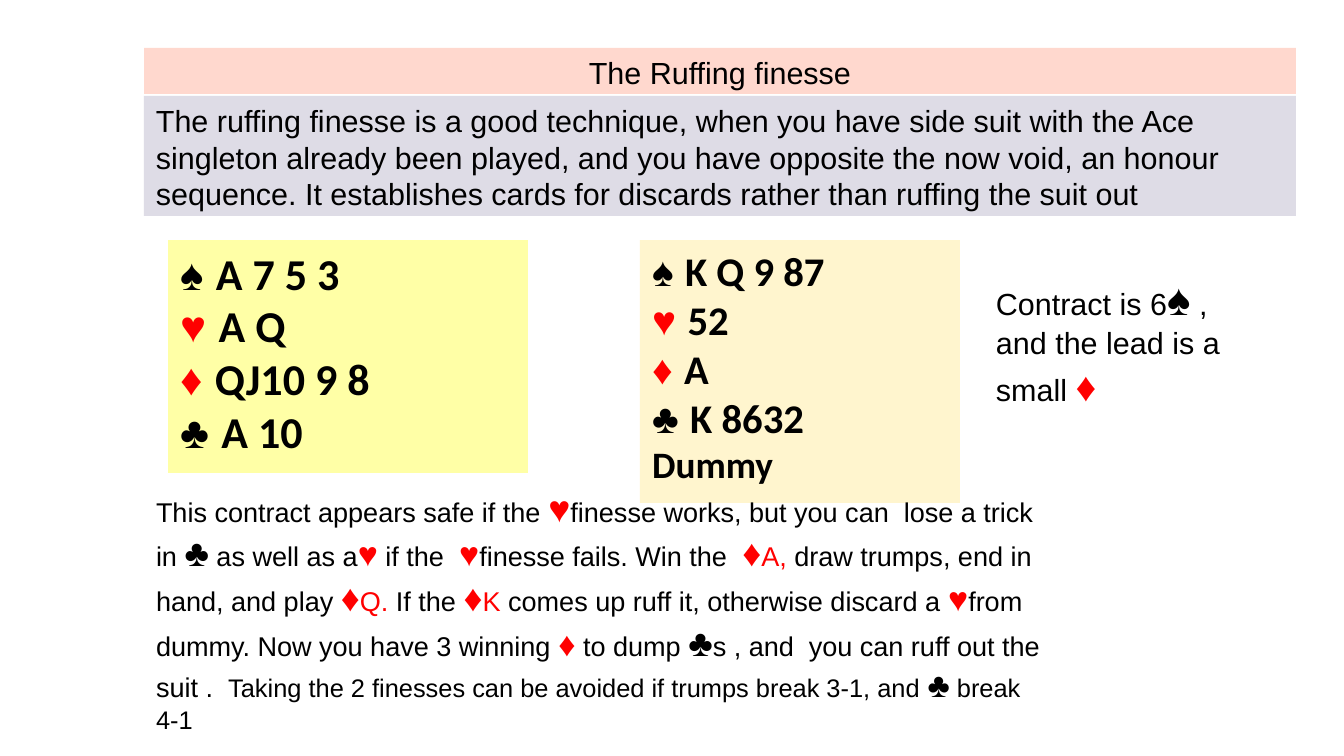
"""Build a bridge lesson slide about the ruffing finesse."""
import dataclasses
import typing

import lxml.etree
import pptx
import pptx.dml.color
import pptx.enum.text
import pptx.oxml.ns
import pptx.util

PX = 7495
BLACK, RED = "000000", "FF0000"
ALIGN = pptx.enum.text.PP_ALIGN
ANCHOR = pptx.enum.text.MSO_ANCHOR


@dataclasses.dataclass(frozen=True)
class Span:
    text: str
    size: int
    color: str = BLACK
    bold: bool = False
    font: str = "Arial"


@dataclasses.dataclass(frozen=True)
class Panel:
    left: int
    top: int
    width: int
    height: int
    paras: list[list[Span]]
    fill: typing.Optional[str] = None
    align: ALIGN = ALIGN.LEFT


def rgb(color: str) -> pptx.dml.color.RGBColor:
    return pptx.dml.color.RGBColor.from_string(color)


def suit(symbol: str, size: int, bold: bool = True) -> Span:
    return Span(symbol, size, RED if symbol[0] in "♥♦" else BLACK, bold)


def hand(size: int, *holdings: str) -> list[list[Span]]:
    return [
        [suit(symbol + " ", size, False), Span(cards, size, bold=True, font="Calibri")]
        for symbol, cards in zip("♠♥♦♣", holdings)
    ]


def add_span(para: typing.Any, span: Span) -> None:
    run = para.add_run()
    run.text = span.text
    values = {"name": span.font, "size": pptx.util.Pt(span.size), "bold": span.bold}
    for name, value in values.items():
        setattr(run.font, name, value)
    run.font.color.rgb = rgb(span.color)


def fill_panel(box: typing.Any, panel: Panel) -> None:
    for name in ("left", "top", "width", "height"):
        setattr(box, name, getattr(panel, name) * PX)
    if panel.fill:
        box.fill.solid()
        box.fill.fore_color.rgb = rgb(panel.fill)
    frame = box.text_frame
    frame_values = {
        "word_wrap": True,
        "auto_size": pptx.enum.text.MSO_AUTO_SIZE.NONE,
        "vertical_anchor": ANCHOR.TOP,
    }
    for name, value in frame_values.items():
        setattr(frame, name, value)
    para_values = {
        "alignment": panel.align,
        "line_spacing": 1.0,
        "space_before": pptx.util.Pt(0),
        "space_after": pptx.util.Pt(0),
    }
    for index, spans in enumerate(panel.paras):
        para = frame.add_paragraph() if index else frame.paragraphs[0]
        for name, value in para_values.items():
            setattr(para, name, value)
        properties = para._p.get_or_add_pPr()
        properties.set("marL", "0")
        properties.set("indent", "0")
        lxml.etree.SubElement(properties, pptx.oxml.ns.qn("a:buNone"))
        for span in spans:
            add_span(para, span)


TITLE = Panel(144, 48, 1152, 46, [[Span("The Ruffing finesse", 18)]], "FFD8CE", ALIGN.CENTER)
HANDS = [
    Panel(168, 240, 360, 233, hand(26, "A 7 5 3", "A Q", "QJ10 9 8", "A 10"), "FFFFA6"),
    Panel(
        640, 240, 320, 263,
        hand(24, "K Q 9 87", "52", "A", "K 8632")
        + [[Span("Dummy", 22, bold=True, font="Calibri")]],
        "FFF5CE",
    ),
]
INTRO = (
    "The ruffing finesse is a good technique, when you have side suit with the Ace "
    "singleton already been played, and you have opposite the now void, an honour "
    "sequence. It establishes cards for discards rather than ruffing the suit out"
)
EXPLANATION = [
    Span("This contract appears safe if the ", 16),
    suit("♥", 22),
    Span("finesse works, but you can  lose a trick in ", 16),
    suit("♣", 22),
    Span(" as well as a", 16),
    suit("♥", 20),
    Span(" if the  ", 16),
    suit("♥", 20),
    Span("finesse fails. Win the  ", 16),
    suit("♦", 22),
    Span("A, ", 16, RED),
    Span("draw trumps, end in hand, and play ", 16),
    suit("♦", 22),
    Span("Q.", 16, RED),
    Span(" If the ", 16),
    suit("♦", 22),
    Span("K", 16, RED),
    Span(" comes up ruff it, otherwise discard a ", 16),
    suit("♥", 20),
    Span("from dummy. Now you have 3 winning ", 16),
    suit("♦", 20),
    Span(" to dump ", 16),
    suit("♣", 22),
    Span("s , and  you can ruff out the suit .  ", 16),
    Span("Taking the 2 finesses can be avoided if trumps break 3-1, and ", 15),
    suit("♣", 20),
    Span(" break 4-1", 15),
]
CONTRACT = [
    Span("Contract is 6", 18),
    suit("♠", 26, False),
    Span(" , and the lead is a small ", 18),
    suit("♦", 24),
]
TEXTS = [
    Panel(144, 96, 1152, 120, [[Span(INTRO, 18)]], "DEDCE6"),
    Panel(144, 479, 912, 266, [EXPLANATION]),
    Panel(984, 265, 264, 150, [CONTRACT]),
]


def main() -> None:
    deck = pptx.Presentation()
    deck.slide_width, deck.slide_height = 1344 * PX, 756 * PX
    page = deck.slides.add_slide(deck.slide_layouts.get_by_name("Two Content"))
    fill_panel(page.shapes.title, TITLE)
    for index, panel in enumerate(HANDS, start=1):
        fill_panel(page.placeholders[index], panel)
    for panel in TEXTS:
        fill_panel(page.shapes.add_textbox(0, 0, PX, PX), panel)
    deck.save("out.pptx")


if __name__ == "__main__":
    main()
